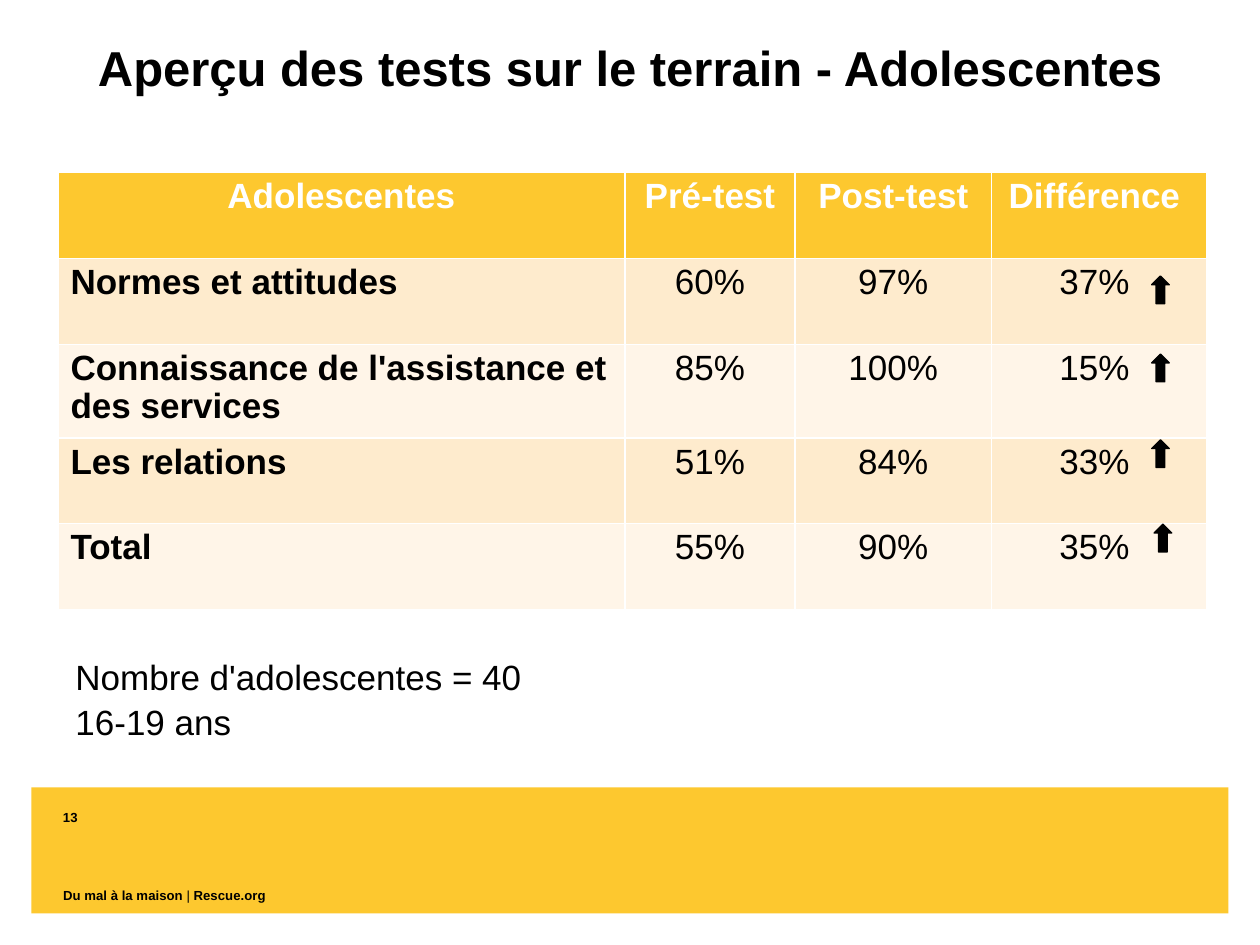
from pptx import Presentation
from pptx import util as u
from pptx.dml.color import RGBColor
from pptx.enum import shapes, text

GOLD = RGBColor(0xFD, 0xC8, 0x2F)
SAND = RGBColor(0xFE, 0xEB, 0xCD)
CREAM = RGBColor(0xFF, 0xF5, 0xE8)
BLACK = RGBColor(0, 0, 0)
WHITE = RGBColor(0xFF, 0xFF, 0xFF)

WIDTH, HEIGHT = u.Inches(10), u.Inches(7.5)
TABLE_LEFT, TABLE_TOP, TABLE_HEIGHT = 0.46, 1.37, 3.41
COLUMNS = [4.5, 1.35, 1.56, 1.71]
ROWS = [
    ["Adolescentes", "Pré-test", "Post-test", "Différence "],
    ["Normes et attitudes", "60%", "97%", "37% "],
    ["Connaissance de l'assistance et des services", "85%", "100%", "15% "],
    ["Les relations", "51%", "84%", "33% "],
    ["Total", "55%", "90%", "35% "],
]
ARROWS = [(9.14, 2.19), (9.14, 2.81), (9.14, 3.49), (9.16, 4.16)]


def inches(*lengths):
    return [u.Inches(length) for length in lengths]


def style(para, size, bold=False, color=BLACK, align=text.PP_ALIGN.LEFT):
    para.alignment = align
    para.font.name = "Arial"
    para.font.size = u.Pt(size)
    para.font.bold = bold
    para.font.color.rgb = color


def add_text(page, place, lines, size, bold=False, align=text.PP_ALIGN.LEFT,
             inset=True, spacing=1.0):
    """Add a wrapped text box with one paragraph per line."""
    box = page.shapes.add_textbox(*inches(*place))
    frame = box.text_frame
    frame.word_wrap = True
    if not inset:
        frame.margin_left = frame.margin_right = 0
        frame.margin_top = frame.margin_bottom = 0
    frame.text = "\n".join(lines)
    for para in frame.paragraphs:
        style(para, size, bold, align=align)
        para.line_spacing = spacing
    return frame


def add_solid(page, kind, place, color):
    shape = page.shapes.add_shape(kind, *inches(*place))
    shape.shadow.inherit = False
    shape.fill.solid()
    shape.fill.fore_color.rgb = color
    shape.line.fill.background()
    return shape


def add_footer(page):
    add_solid(page, shapes.MSO_SHAPE.RECTANGLE, (0.25, 6.25, 9.5, 1), GOLD)
    add_text(page, (0.5, 6.42, 0.83, 0.13), ["13"], 7.5, True, inset=False)
    frame = add_text(page, (0.5, 7.04, 3.25, 0.13), [""], 7.5, inset=False)
    frame.vertical_anchor = text.MSO_ANCHOR.BOTTOM
    for words, bold in [("Du mal à la maison ", True), ("| ", False), ("Rescue.org", True)]:
        span = frame.paragraphs[0].add_run()
        span.text = words
        span.font.bold = bold


def add_results(page):
    place = inches(TABLE_LEFT, TABLE_TOP, sum(COLUMNS), TABLE_HEIGHT)
    table = page.shapes.add_table(len(ROWS), len(COLUMNS), *place).table
    for column, width in zip(table.columns, COLUMNS):
        column.width = u.Inches(width)
    for r, row in enumerate(ROWS):
        header = r == 0
        fill = GOLD if header else (CREAM, SAND)[r % 2]
        for c, words in enumerate(row):
            label = c == 0
            cell = table.cell(r, c)
            cell.fill.solid()
            cell.fill.fore_color.rgb = fill
            cell.text = words
            para = cell.text_frame.paragraphs[0]
            centred = header or not label
            style(para, 20, header or label, WHITE if header else BLACK,
                  text.PP_ALIGN.CENTER if centred else text.PP_ALIGN.LEFT)
            para.line_spacing = 0.96


def add_rise(page, left, top):
    arrow = add_solid(page, shapes.MSO_SHAPE.UP_ARROW, (left, top, 0.14, 0.22), BLACK)
    arrow.line.color.rgb = BLACK
    arrow.line.width = u.Pt(0.75)


def main():
    deck = Presentation()
    deck.slide_width, deck.slide_height = WIDTH, HEIGHT
    page = deck.slides.add_slide(deck.slide_layouts[6])
    add_footer(page)
    add_text(page, (0.46, 0.25, 9.08, 1.33),
             ["Aperçu des tests sur le terrain - Adolescentes"],
             28, True, text.PP_ALIGN.CENTER)
    add_results(page)
    for left, top in ARROWS:
        add_rise(page, left, top)
    add_text(page, (0.5, 5.14, 9.08, 0.77),
             ["Nombre d'adolescentes = 40", "16-19 ans"], 20, spacing=1.05)
    deck.save("out.pptx")


if __name__ == "__main__":
    main()
